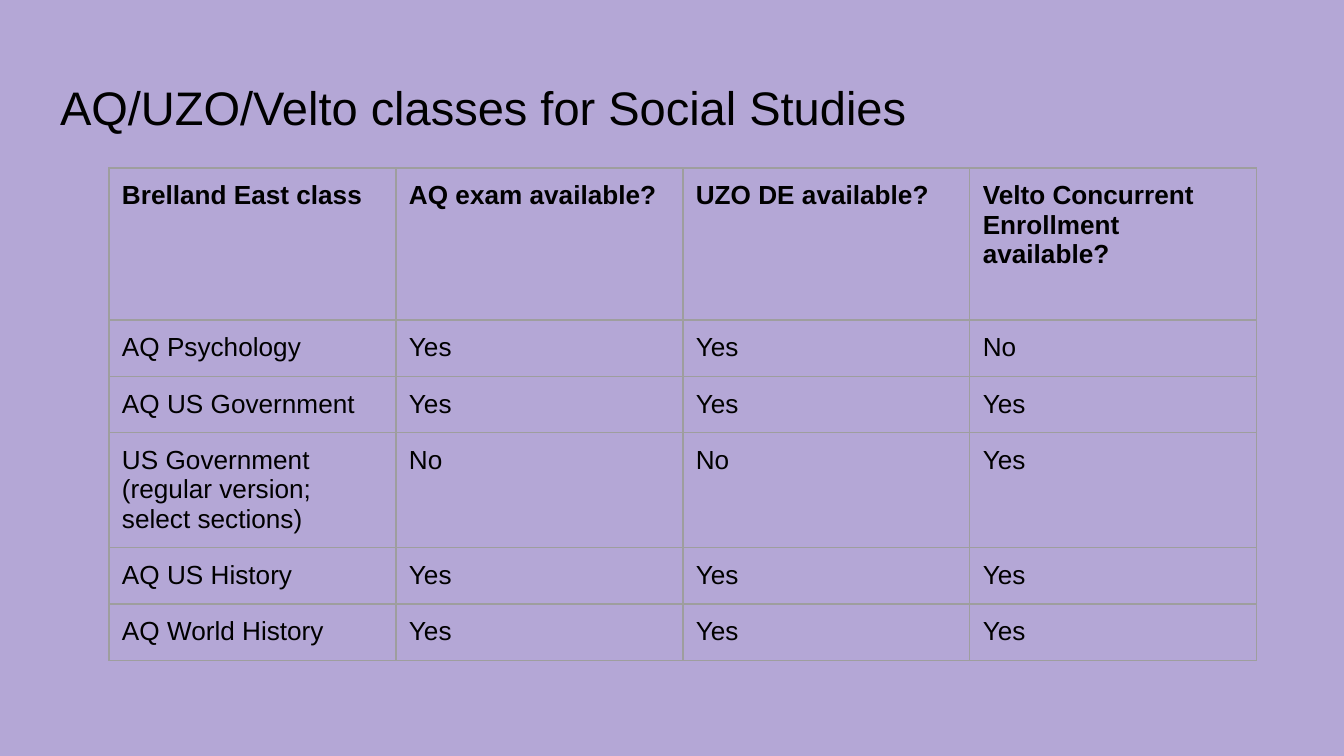
from lxml import etree
from pptx import Presentation, util as u
from pptx.dml.color import RGBColor
from pptx.enum import text
from pptx.oxml import ns

SCALE = 9144000 / 1344


def px(length):
    return u.Emu(round(length * SCALE))


def color(value):
    return RGBColor.from_string(value)


deck = Presentation()
deck.slide_width, deck.slide_height = px(1344), px(756)
page = deck.slides.add_slide(deck.slide_layouts[5])
page.background.fill.solid()
page.background.fill.fore_color.rgb = color("B4A7D6")

title = page.shapes.title
title.left, title.top, title.width, title.height = px(46), px(66), px(1252), px(84)
frame = title.text_frame
frame.text = "AQ/UZO/Velto classes for Social Studies"
frame.word_wrap = True
frame.auto_size = text.MSO_AUTO_SIZE.NONE
frame.vertical_anchor = text.MSO_ANCHOR.BOTTOM
frame.margin_left = frame.margin_right = px(14)
frame.margin_top, frame.margin_bottom = px(13), px(15)
para = frame.paragraphs[0]
para.alignment = text.PP_ALIGN.LEFT
span = para.runs[0]
span.font.name = "Arial"
span.font.size = u.Pt(25.2)
span.font.color.rgb = color("000000")

classes = [
    ("Brelland East class", "AQ exam available?", "UZO DE available?",
     "Velto Concurrent Enrollment available?"),
    ("AQ Psychology", "Yes", "Yes", "No"),
    ("AQ US Government", "Yes", "Yes", "Yes"),
    ("US Government (regular version; select sections)", "No", "No", "Yes"),
    ("AQ US History", "Yes", "Yes", "Yes"),
    ("AQ World History", "Yes", "Yes", "Yes"),
]
heights = [152, 46, 46, 97, 46, 46]
table = page.shapes.add_table(
    len(classes), 4, px(109), px(168), px(4 * 287), px(sum(heights))
).table
table.horz_banding = False
for column in table.columns:
    column.width = px(287)

for row_index, (entries, height) in enumerate(zip(classes, heights)):
    table.rows[row_index].height = px(height)
    for column_index, entry in enumerate(entries):
        cell = table.cell(row_index, column_index)
        cell.text_frame.text = entry
        cell.margin_left = cell.margin_right = px(13)
        cell.margin_top, cell.margin_bottom = px(13), px(14)
        cell.vertical_anchor = text.MSO_ANCHOR.TOP
        span = cell.text_frame.paragraphs[0].runs[0]
        span.font.name = "Arial"
        span.font.size = u.Pt(14)
        span.font.bold = row_index == 0
        span.font.color.rgb = color("000000")
        properties = cell._tc.get_or_add_tcPr()
        for side in ("lnL", "lnR", "lnT", "lnB"):
            border = etree.SubElement(properties, ns.qn(f"a:{side}"), w=str(u.Pt(0.75)))
            fill = etree.SubElement(border, ns.qn("a:solidFill"))
            etree.SubElement(fill, ns.qn("a:srgbClr"), val="9E9E9E")
        cell.fill.background()

deck.save("out.pptx")
